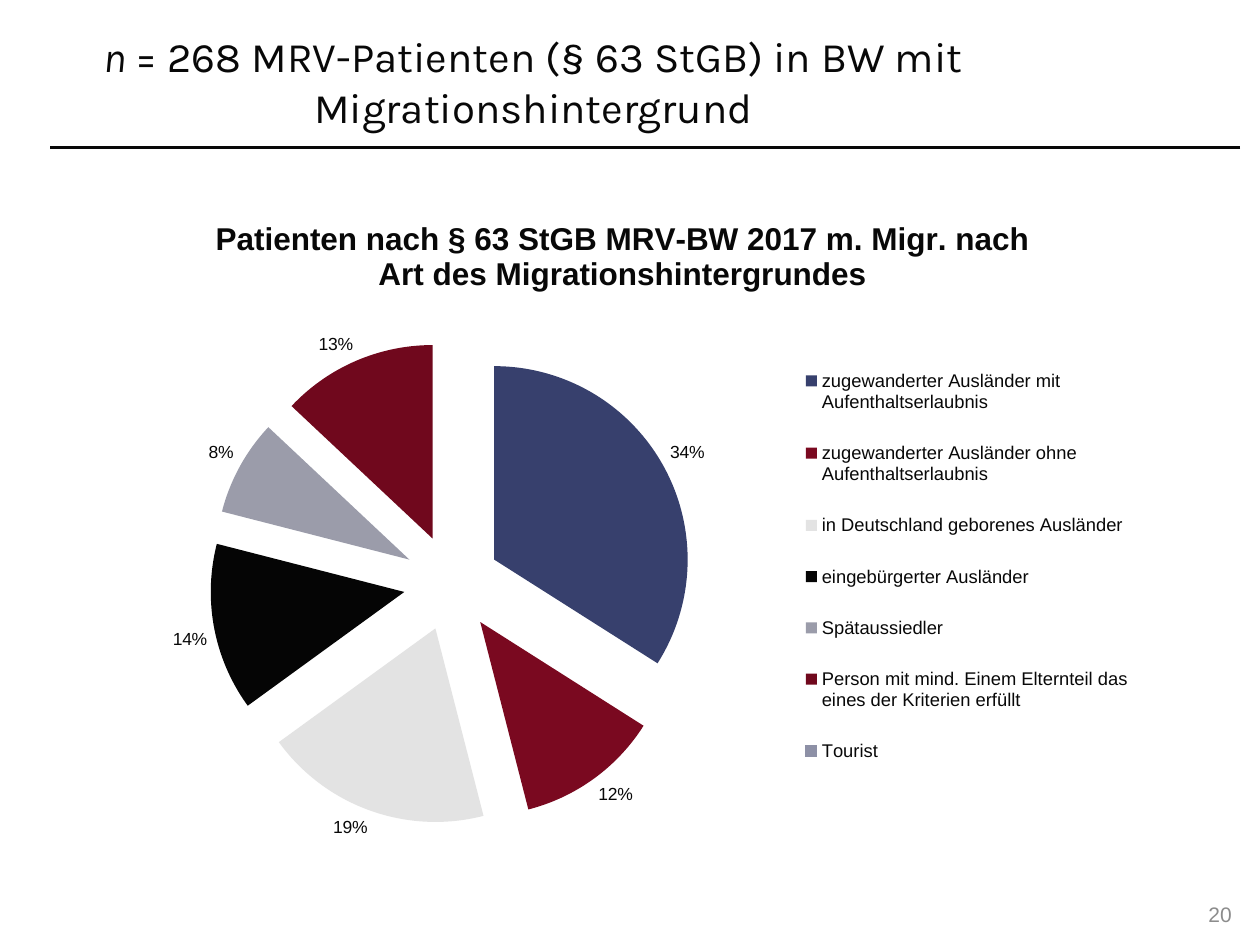
from dataclasses import dataclass

from lxml.etree import SubElement
from pptx import Presentation
from pptx.chart.data import CategoryChartData
from pptx.dml.color import RGBColor
from pptx.enum.chart import XL_CHART_TYPE, XL_LABEL_POSITION, XL_LEGEND_POSITION
from pptx.enum.shapes import MSO_CONNECTOR
from pptx.enum.text import MSO_ANCHOR, PP_ALIGN
from pptx.oxml import parse_xml
from pptx.oxml.ns import nsdecls, qn
from pptx.util import Cm, Pt


@dataclass(frozen=True)
class Theme:
    ink: str = "080808"
    muted: str = "8C8C8C"
    heading_font: str = "Karla"
    body_font: str = "Arial"
    heading_size: float = 24
    chart_title_size: float = 18
    number_size: float = 12
    legend_size: float = 10.5
    label_size: float = 10


CHART_TITLE = ("Patienten nach § 63 StGB MRV-BW 2017 m. Migr. nach "
               "Art des Migrationshintergrundes")
# category, share, slice colour
SHARES = [
    ("zugewanderter Ausländer mit Aufenthaltserlaubnis", 0.34, "37406D"),
    ("zugewanderter Ausländer ohne Aufenthaltserlaubnis", 0.12, "7A0920"),
    ("in Deutschland geborenes Ausländer", 0.19, "E3E3E3"),
    ("eingebürgerter Ausländer", 0.14, "050505"),
    ("Spätaussiedler", 0.08, "9B9CAA"),
    ("Person mit mind. Einem Elternteil das eines der Kriterien erfüllt", 0.13, "70081D"),
    ("Tourist", 0, "8D90A6"),
]


def place(element, *, inner=False, **fractions):
    """Set the manual layout of a chart part, as fractions of the chart."""
    target = '<c:layoutTarget val="inner"/>' if inner else ""
    modes = "".join(f'<c:{axis}Mode val="edge"/>' for axis in "xy")
    sizes = "".join(f'<c:{key} val="{value}"/>' for key, value in fractions.items())
    for old in element.findall(qn("c:layout")):
        element.remove(old)
    layout = parse_xml(f'<c:layout {nsdecls("c")}><c:manualLayout>{target}{modes}{sizes}'
                       '</c:manualLayout></c:layout>')
    if inner:
        element.insert(0, layout)
    else:
        before = "c:tx" if element.tag == qn("c:title") else "c:legendPos"
        element.find(qn(before)).addnext(layout)


class SlideBuilder:
    def __init__(self, deck, theme):
        self.theme = theme
        self.page = deck.slides.add_slide(deck.slide_layouts[6])

    def style(self, font, size, color=None, name=None, **flags):
        font.name = name or self.theme.body_font
        font.size = Pt(size)
        font.color.rgb = RGBColor.from_string(color or self.theme.ink)
        for flag, value in flags.items():
            setattr(font, flag, value)

    def rule(self, left, right, top):
        line = self.page.shapes.add_connector(
            MSO_CONNECTOR.STRAIGHT, Cm(right), Cm(top), Cm(left), Cm(top))
        line.line.color.rgb = RGBColor.from_string(self.theme.ink)
        line.line.width = Pt(1.5)
        SubElement(line.element.spPr, qn("a:effectLst"))

    def text(self, left, top, width, height, runs, align, size, **look):
        """Add one paragraph; runs are (wording, italic) pairs."""
        box = self.page.shapes.add_textbox(Cm(left), Cm(top), Cm(width), Cm(height))
        frame = box.text_frame
        frame.word_wrap = True
        frame.vertical_anchor = MSO_ANCHOR.MIDDLE
        para = frame.paragraphs[0]
        para.alignment = align
        for wording, italic in runs:
            span = para.add_run()
            span.text = wording
            self.style(span.font, size, italic=italic, **look)

    def pie(self, left, top, width, height, title, shares):
        data = CategoryChartData(number_format="0%")
        data.categories = [name for name, _, _ in shares]
        data.add_series(title, [share for _, share, _ in shares])
        chart = self.page.shapes.add_chart(
            XL_CHART_TYPE.PIE, Cm(left), Cm(top), Cm(width), Cm(height), data).chart
        self.style(chart.font, self.theme.label_size)

        chart.has_title = True
        span = chart.chart_title.text_frame.paragraphs[0].add_run()
        span.text = title
        self.style(span.font, self.theme.chart_title_size, bold=True)
        place(chart.chart_title._element, x=0.11, y=0.04)

        chart.has_legend = True
        chart.legend.position = XL_LEGEND_POSITION.RIGHT
        chart.legend.include_in_layout = False
        self.style(chart.legend.font, self.theme.legend_size)
        place(chart.legend._element, x=0.67, y=0.23, w=0.32, h=0.67)

        plot = chart.plots[0]
        plot.vary_by_categories = True
        place(chart._chartSpace.chart.plotArea, inner=True, x=0.11, y=0.23, w=0.46, h=0.72)
        series = plot.series[0]
        for index, (_, share, color) in enumerate(shares):
            form = series.points[index].format
            form.fill.solid()
            form.fill.fore_color.rgb = RGBColor.from_string(color)
            if share:
                form.line.fill.background()
            else:  # an outline keeps an empty slice visible
                form.line.color.rgb = RGBColor.from_string(color)
                form.line.width = Pt(2)
        explosion = parse_xml(f'<c:explosion {nsdecls("c")} val="25"/>')
        series._element.find(qn("c:dPt")).addprevious(explosion)

        labels = series.data_labels
        labels.show_value = True
        labels.number_format = "0%"
        labels.number_format_is_linked = False
        labels.position = XL_LABEL_POSITION.OUTSIDE_END
        self.style(labels.font, self.theme.label_size)


def main():
    deck = Presentation()
    deck.slide_width, deck.slide_height = Cm(25.4), Cm(19.05)
    theme = Theme()
    slide = SlideBuilder(deck, theme)
    slide.rule(1, 25, 2.97)
    slide.text(1.3, 0.91, 18.9, 1.45,
               [("n ", True),
                ("= 268 MRV-Patienten (§ 63 StGB) in BW mit Migrationshintergrund", False)],
               PP_ALIGN.CENTER, theme.heading_size, name=theme.heading_font)
    slide.text(24.08, 17.9, 1, 1.04, [("20", False)],
               PP_ALIGN.RIGHT, theme.number_size, color=theme.muted)
    slide.pie(1.9, 3.73, 21.2, 13.6, CHART_TITLE, SHARES)
    deck.save("out.pptx")


if __name__ == "__main__":
    main()
